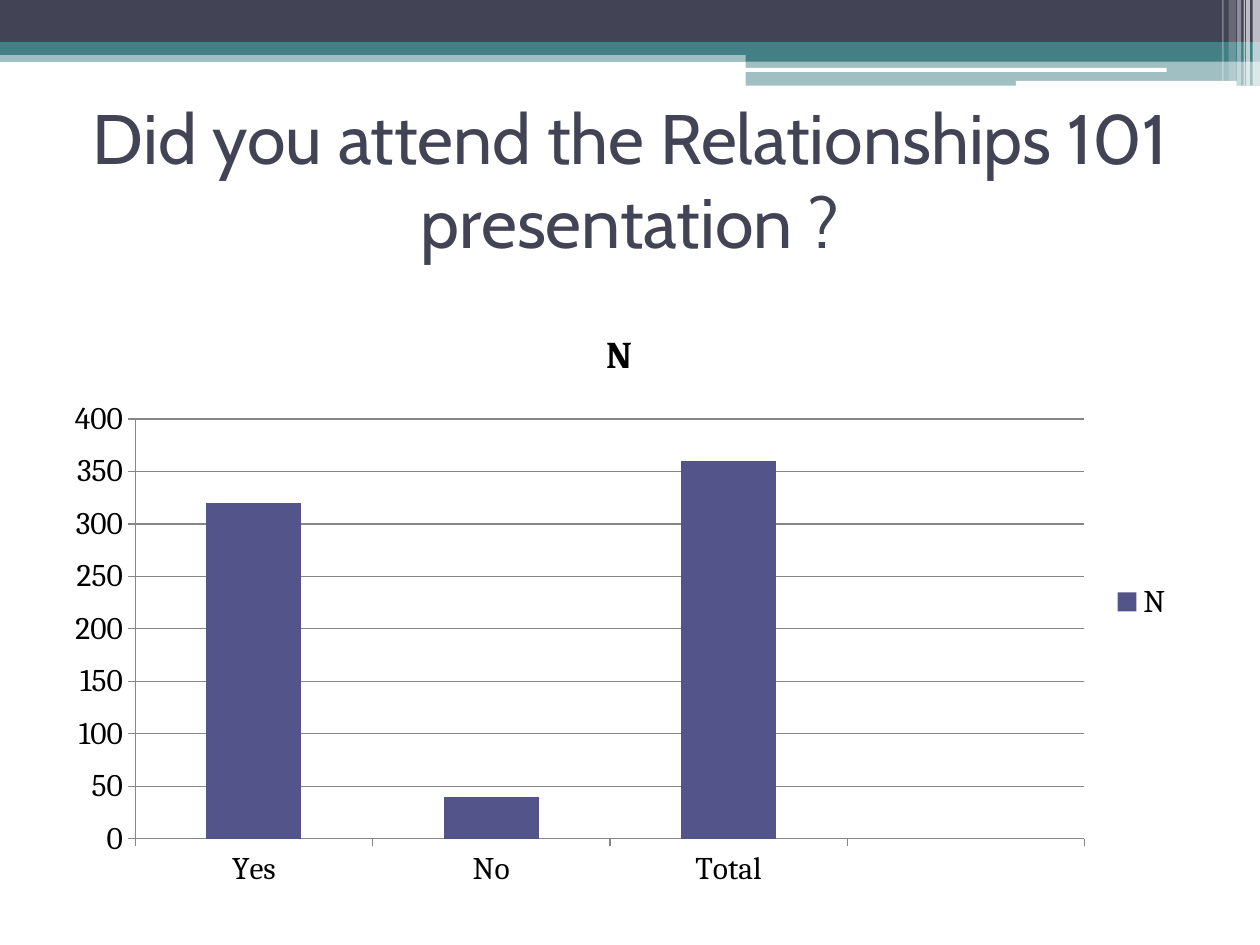
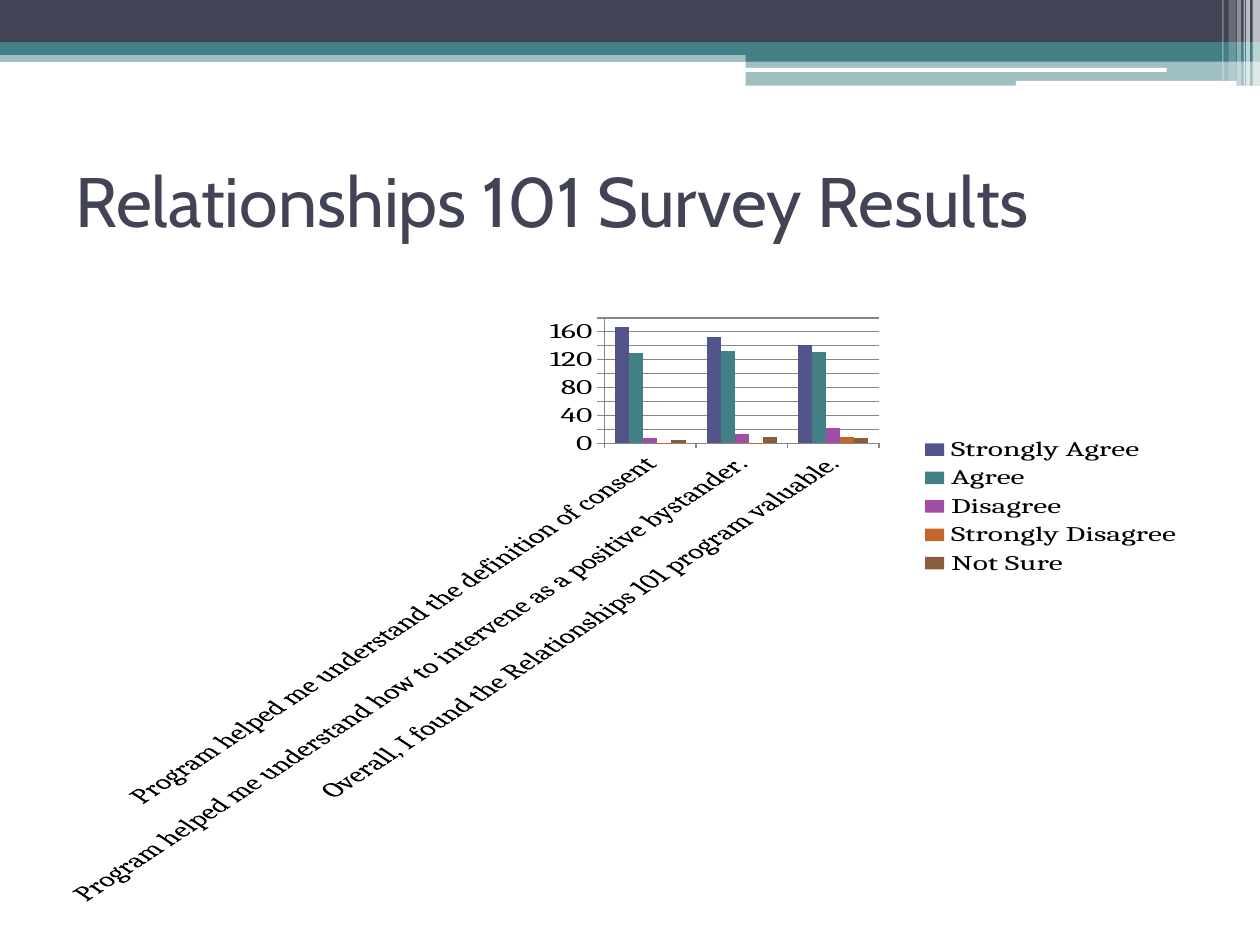
from lxml import etree
from pptx import Presentation
from pptx.chart.data import CategoryChartData
from pptx.dml.color import RGBColor
from pptx.enum.chart import XL_CHART_TYPE as ChartType
from pptx.enum.chart import XL_LEGEND_POSITION as LegendPosition
from pptx.enum.chart import XL_TICK_MARK as TickMark
from pptx.enum.shapes import MSO_SHAPE as Preset
from pptx.enum.text import MSO_ANCHOR as Anchor
from pptx.enum.text import PP_ALIGN as Align
from pptx.oxml.ns import qn
from pptx.util import Cm, Pt

WIDTH, HEIGHT = 25.4, 19.05
NAVY, TEAL, WHITE, BLACK, GRAY = "424456", "438086", "FFFFFF", "000000", "868686"
INDIGO, PURPLE, ORANGE, BROWN = "53548A", "A04DA3", "C4652D", "8B5D3D"
TITLE_FONT, CHART_FONT = "Cabin", "Cambria"
RIGHT_BAND = 15.03

# Header parts: left, top, width, height (cm), colour, opacity in percent
BANDS = [
    (0, 1.02, WIDTH, 0.23, TEAL, 50),
    (0, 0, WIDTH, 0.87, NAVY, 100),
    (0, 0.85, WIDTH, 0.26, TEAL, 100),
    (RIGHT_BAND, 0.99, WIDTH - RIGHT_BAND, 0.25, TEAL, 100),
    (RIGHT_BAND, 1.23, WIDTH - RIGHT_BAND, 0.5, TEAL, 50),
]
ROUNDED_LINES = [
    (15.02, 1.37, 8.5, 0.08, WHITE, 100),
    (20.48, 1.63, 4.45, 0.1, WHITE, 100),
]
# Vertical stripes: left, width, height (cm), opacity in percent
STRIPES = [
    (25.25, 0.15, 1.73, 65),
    (25.12, 0.08, 1.73, 65),
    (25.07, 0.03, 1.73, 60),
    (24.94, 0.08, 1.73, 40),
    (24.77, 0.15, 1.63, 20),
    (24.64, 0.03, 1.63, 30),
]


def color(value):
    return RGBColor.from_string(value)


def style_font(font, name, size, value):
    font.name = name
    font.size = Pt(size)
    font.color.rgb = color(value)


def add_bar(slide, preset, left, top, width, height, fill, opacity):
    shape = slide.shapes.add_shape(preset, Cm(left), Cm(top), Cm(width), Cm(height))
    shape.shadow.inherit = False
    shape.fill.solid()
    shape.fill.fore_color.rgb = color(fill)
    shape.line.fill.background()
    if opacity < 100:
        fill_color = shape.fill._xPr.find(qn("a:solidFill"))[0]
        etree.SubElement(fill_color, qn("a:alpha"), val=str(opacity * 1000))


def add_header(slide):
    for band in BANDS:
        add_bar(slide, Preset.RECTANGLE, *band)
    for line in ROUNDED_LINES:
        add_bar(slide, Preset.ROUNDED_RECTANGLE, *line)
    for left, width, height, opacity in STRIPES:
        add_bar(slide, Preset.RECTANGLE, left, 0, width, height, WHITE, opacity)


def add_title(slide, box, text, alignment):
    frame = slide.shapes.add_textbox(*map(Cm, box)).text_frame
    frame.word_wrap = True
    frame.vertical_anchor = Anchor.MIDDLE
    paragraph = frame.paragraphs[0]
    paragraph.alignment = alignment
    run = paragraph.add_run()
    run.text = text
    style_font(run.font, TITLE_FONT, 40, NAVY)


def add_column_chart(slide, box, chart_type, categories, series, maximum, step,
                     title=None, label_angle=None):
    data = CategoryChartData()
    data.categories = categories
    for name, values, _ in series:
        data.add_series(name, values)
    chart = slide.shapes.add_chart(chart_type, *map(Cm, box), data).chart
    style_font(chart.font, CHART_FONT, 18, BLACK)

    # Title and legend
    chart.has_title = title is not None
    if title is not None:
        run = chart.chart_title.text_frame.paragraphs[0].add_run()
        run.text = title
        style_font(run.font, CHART_FONT, 21.6, BLACK)
        run.font.bold = True
    chart.has_legend = True
    chart.legend.position = LegendPosition.RIGHT
    chart.legend.include_in_layout = False

    # Axes and gridlines
    for axis in (chart.category_axis, chart.value_axis):
        axis.major_tick_mark = TickMark.OUTSIDE
        axis.minor_tick_mark = TickMark.NONE
        axis.format.line.color.rgb = color(GRAY)
    chart.value_axis.minimum_scale = 0
    chart.value_axis.maximum_scale = maximum
    chart.value_axis.major_unit = step
    chart.value_axis.has_major_gridlines = True
    chart.value_axis.major_gridlines.format.line.color.rgb = color(GRAY)
    if label_angle is not None:
        style_font(chart.category_axis.tick_labels.font, CHART_FONT, 18, BLACK)
        body = chart.category_axis._element.find(qn("c:txPr")).find(qn("a:bodyPr"))
        body.set("rot", str(label_angle * 60000))

    # Columns
    plot = chart.plots[0]
    plot.gap_width = 150
    plot.vary_by_categories = False
    for column, (_, _, fill) in zip(plot.series, series):
        column.format.fill.solid()
        column.format.fill.fore_color.rgb = color(fill)
        column.invert_if_negative = False


def add_slide(presentation):
    slide = presentation.slides.add_slide(presentation.slide_layouts[6])
    slide.background.fill.solid()
    slide.background.fill.fore_color.rgb = color(WHITE)
    add_header(slide)
    return slide


def build_attendance(presentation):
    slide = add_slide(presentation)
    add_title(slide, (1.27, 1.9, 22.86, 3.38),
              "Did you attend the Relationships 101 presentation ?", Align.CENTER)
    # The fourth slot has neither a label nor a value
    add_column_chart(slide, (1.05, 6.13, 22.86, 12.01), ChartType.COLUMN_STACKED,
                     ["Yes", "No", "Total"],
                     [("N", (320, 40, 360, None), INDIGO)],
                     maximum=400, step=50, title="N")


def build_survey_results(presentation):
    slide = add_slide(presentation)
    add_title(slide, (1.27, 2.54, 22.86, 2.97),
              "Relationships 101 Survey Results", Align.LEFT)
    statements = [
        "Program helped me understand the definition of consent",
        "Program helped me understand how to intervene as a positive bystander.",
        "Overall, I found the Relationships 101 program valuable.",
    ]
    answers = [
        ("Strongly Agree", (167, 153, 141), INDIGO),
        ("Agree", (130, 133, 131), TEAL),
        ("Disagree", (8, 14, 22), PURPLE),
        ("Strongly Disagree", (1, 1, 9), ORANGE),
        ("Not Sure", (5, 9, 8), BROWN),
    ]
    add_column_chart(slide, (1.27, 6.25, 22.86, 12.01), ChartType.COLUMN_CLUSTERED,
                     statements, answers, maximum=180, step=20, label_angle=-45)


def main():
    presentation = Presentation()
    presentation.slide_width = Cm(WIDTH)
    presentation.slide_height = Cm(HEIGHT)
    build_attendance(presentation)
    build_survey_results(presentation)
    presentation.save("out.pptx")


if __name__ == "__main__":
    main()
